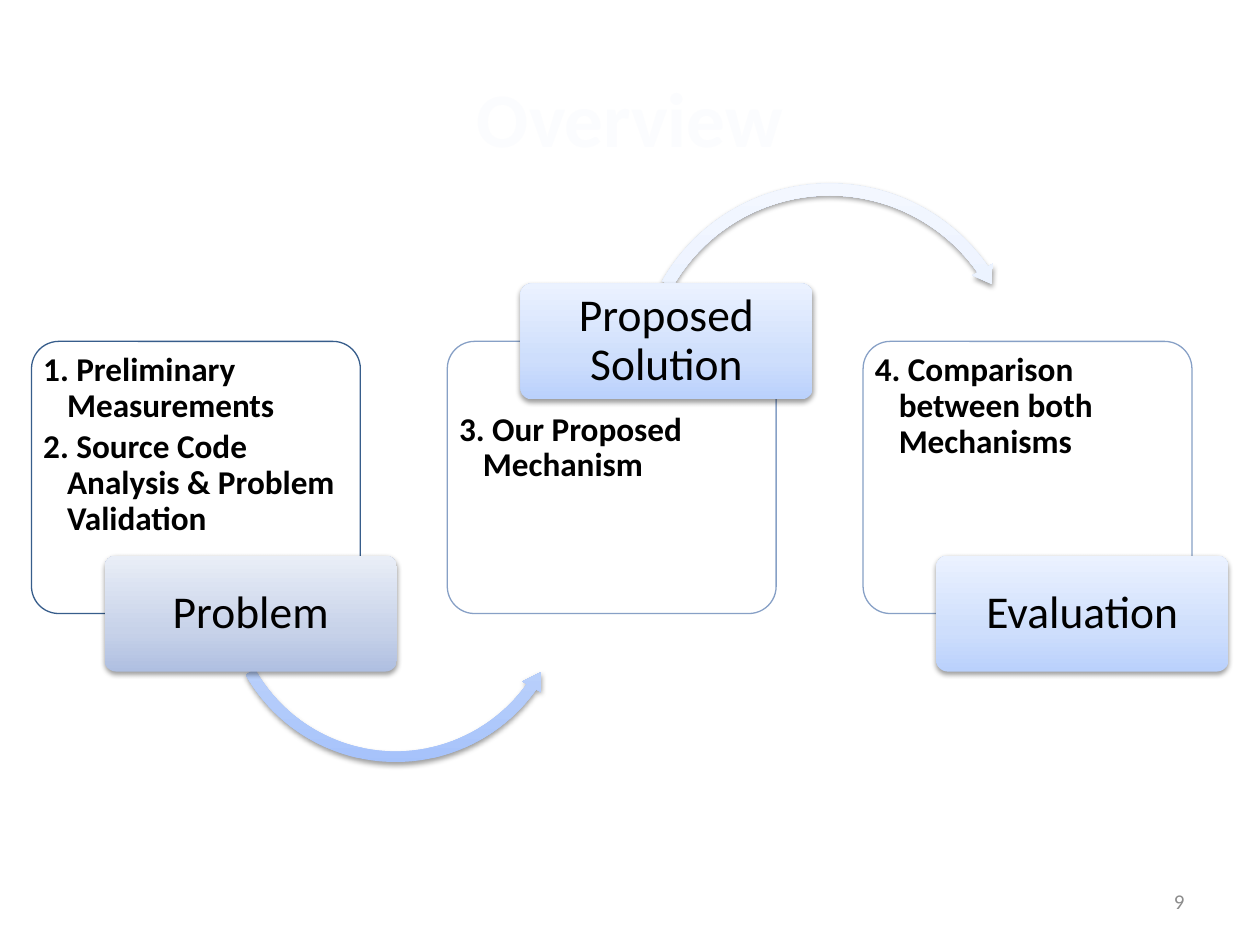
from dataclasses import dataclass
from typing import Optional

from lxml.etree import SubElement
from pptx import Presentation
from pptx.dml.color import RGBColor
from pptx.enum.shapes import MSO_SHAPE
from pptx.enum.text import MSO_ANCHOR, PP_ALIGN
from pptx.oxml.ns import qn
from pptx.util import Inches, Pt

FONT = "Calibri"
CARD_LEFT, CARD_TOP, COLUMN_PITCH = 0.25, 2.71, 3.3
CARD_WIDTH, CARD_HEIGHT = 2.61, 2.16
LABEL_SHIFT, LABEL_WIDTH, LABEL_HEIGHT = 0.58, 2.32, 0.92
HANGING_INDENT = 0.19
PALE_BLUE = ("BAD1FC", "CEDEFC", "EBF2FF")


@dataclass
class Arrow:
    kind: MSO_SHAPE
    left: float
    top: float
    size: float
    adjustments: tuple[float, ...]
    colours: tuple[str, str, str]


@dataclass
class Stage:
    label: str
    points: tuple[str, ...]
    border: str
    colours: tuple[str, str, str]
    label_on_top: bool = False
    arrow: Optional[Arrow] = None


STAGES = (
    Stage("Problem",
          ("1. Preliminary Measurements",
           "2. Source Code Analysis & Problem Validation"),
          "375D8B", ("AFBFE1", "C7D2E9", "E9EEF7"),
          arrow=Arrow(MSO_SHAPE.LEFT_CIRCULAR_ARROW, 1.73, 3.27, 2.82,
                      (0.03, 3.58, 21.33, 90.24, 0.03),
                      ("A5C2FB", "C0D4FB", "E6EEFE"))),
    Stage("Proposed Solution", ("3. Our Proposed Mechanism",),
          "87A0C6", PALE_BLUE, label_on_top=True,
          arrow=Arrow(MSO_SHAPE.CIRCULAR_ARROW, 5.01, 1.41, 3.15,
                      (0.03, 3.17, 195.07, 125.75, 0.03),
                      ("D6E3FE", "E1EBFE", "F3F7FF"))),
    Stage("Evaluation", ("4. Comparison between both Mechanisms",),
          "87A0C6", PALE_BLUE),
)


def rgb(colour: str) -> RGBColor:
    return RGBColor.from_string(colour)


def add_child(parent, tag: str, **attributes):
    return SubElement(parent, qn(tag), {k: str(v) for k, v in attributes.items()})


def add_preset(slide, kind, left, top, width, height):
    shape = slide.shapes.add_shape(
        kind, Inches(left), Inches(top), Inches(width), Inches(height))
    shape.shadow.inherit = False
    return shape


def style_raised(shape, colours: tuple[str, str, str]) -> None:
    """Give a borderless shape a gradient from bottom to top and a soft shadow."""
    shape.line.fill.background()
    shape.fill.gradient()
    shape.fill.gradient_angle = 90
    properties = shape._element.spPr
    stops = properties.find(qn("a:gradFill")).find(qn("a:gsLst"))
    for stop in list(stops):
        stops.remove(stop)
    for position, colour in zip((0, 35, 100), colours):
        stop = add_child(stops, "a:gs", pos=position * 1000)
        add_child(stop, "a:srgbClr", val=colour)
    shadow = add_child(properties.find(qn("a:effectLst")), "a:outerShdw",
                       blurRad=Pt(3.1), dist=Pt(1.6), dir=90 * 60000,
                       rotWithShape=0)
    black = add_child(shadow, "a:srgbClr", val="000000")
    add_child(black, "a:alpha", val=38000)


def set_insets(text_frame, side: float, top: float, bottom: float) -> None:
    text_frame.word_wrap = True
    text_frame.margin_left = text_frame.margin_right = Inches(side)
    text_frame.margin_top, text_frame.margin_bottom = Inches(top), Inches(bottom)


def format_paragraph(paragraph, size, colour="000000", bold=False,
                     alignment=PP_ALIGN.LEFT) -> None:
    paragraph.alignment = alignment
    for run in paragraph.runs:
        run.font.name, run.font.size, run.font.bold = FONT, Pt(size), bold
        run.font.color.rgb = rgb(colour)


def add_text(slide, text, left, top, width, height, **text_format) -> None:
    box = slide.shapes.add_textbox(
        Inches(left), Inches(top), Inches(width), Inches(height))
    frame = box.text_frame
    frame.word_wrap = True
    frame.vertical_anchor = MSO_ANCHOR.MIDDLE
    frame.text = text
    format_paragraph(frame.paragraphs[0], **text_format)


def add_card(slide, stage: Stage, left: float) -> None:
    card = add_preset(slide, MSO_SHAPE.ROUNDED_RECTANGLE,
                      left, CARD_TOP, CARD_WIDTH, CARD_HEIGHT)
    card.adjustments[0] = 0.1
    card.fill.solid()
    card.fill.fore_color.rgb = rgb("FFFFFF")
    fill_colour = card._element.spPr.find(qn("a:solidFill"))[0]
    add_child(fill_colour, "a:alpha", val=90000)
    card.line.color.rgb = rgb(stage.border)
    card.line.width = Pt(0.75)

    frame = card.text_frame
    frame.vertical_anchor = MSO_ANCHOR.TOP
    set_insets(frame, 0.03, 0.5 if stage.label_on_top else 0.03, 0.03)
    frame.text = "\n".join(stage.points)
    for paragraph in frame.paragraphs:
        format_paragraph(paragraph, 19, bold=True)
        paragraph.level = 1
        paragraph.line_spacing = 0.9
        paragraph.space_after = Pt(3)
        properties = paragraph._p.get_or_add_pPr()
        properties.set("marL", str(Inches(HANGING_INDENT)))
        properties.set("indent", str(-Inches(HANGING_INDENT)))


def add_arrow(slide, arrow: Arrow) -> None:
    shape = add_preset(slide, arrow.kind, arrow.left, arrow.top,
                       arrow.size, arrow.size)
    for index, value in enumerate(arrow.adjustments):
        shape.adjustments[index] = value
    style_raised(shape, arrow.colours)


def add_label(slide, stage: Stage, card_left: float) -> None:
    """Centre the label on the top or bottom edge of its card."""
    edge = CARD_TOP if stage.label_on_top else CARD_TOP + CARD_HEIGHT
    label = add_preset(slide, MSO_SHAPE.ROUNDED_RECTANGLE,
                       card_left + LABEL_SHIFT, edge - LABEL_HEIGHT / 2,
                       LABEL_WIDTH, LABEL_HEIGHT)
    label.adjustments[0] = 0.1
    style_raised(label, stage.colours)
    frame = label.text_frame
    frame.vertical_anchor = MSO_ANCHOR.MIDDLE
    set_insets(frame, 0.05, 0.04, 0.04)
    frame.text = stage.label
    paragraph = frame.paragraphs[0]
    format_paragraph(paragraph, 26, alignment=PP_ALIGN.CENTER)
    paragraph.line_spacing = 0.9


def main() -> None:
    presentation = Presentation()
    presentation.slide_width, presentation.slide_height = Inches(10), Inches(7.5)
    slide = presentation.slides.add_slide(presentation.slide_layouts[6])

    add_text(slide, "Overview", 0.5, 0.3, 9, 1.25, size=44, colour="FBFCFE",
             bold=True, alignment=PP_ALIGN.CENTER)
    add_text(slide, "9", 7.17, 6.95, 2.33, 0.4, size=12, colour="8C8C8C",
             alignment=PP_ALIGN.RIGHT)
    for column, stage in enumerate(STAGES):
        left = CARD_LEFT + column * COLUMN_PITCH
        add_card(slide, stage, left)
        if stage.arrow:
            add_arrow(slide, stage.arrow)
        add_label(slide, stage, left)

    presentation.save("out.pptx")


if __name__ == "__main__":
    main()
